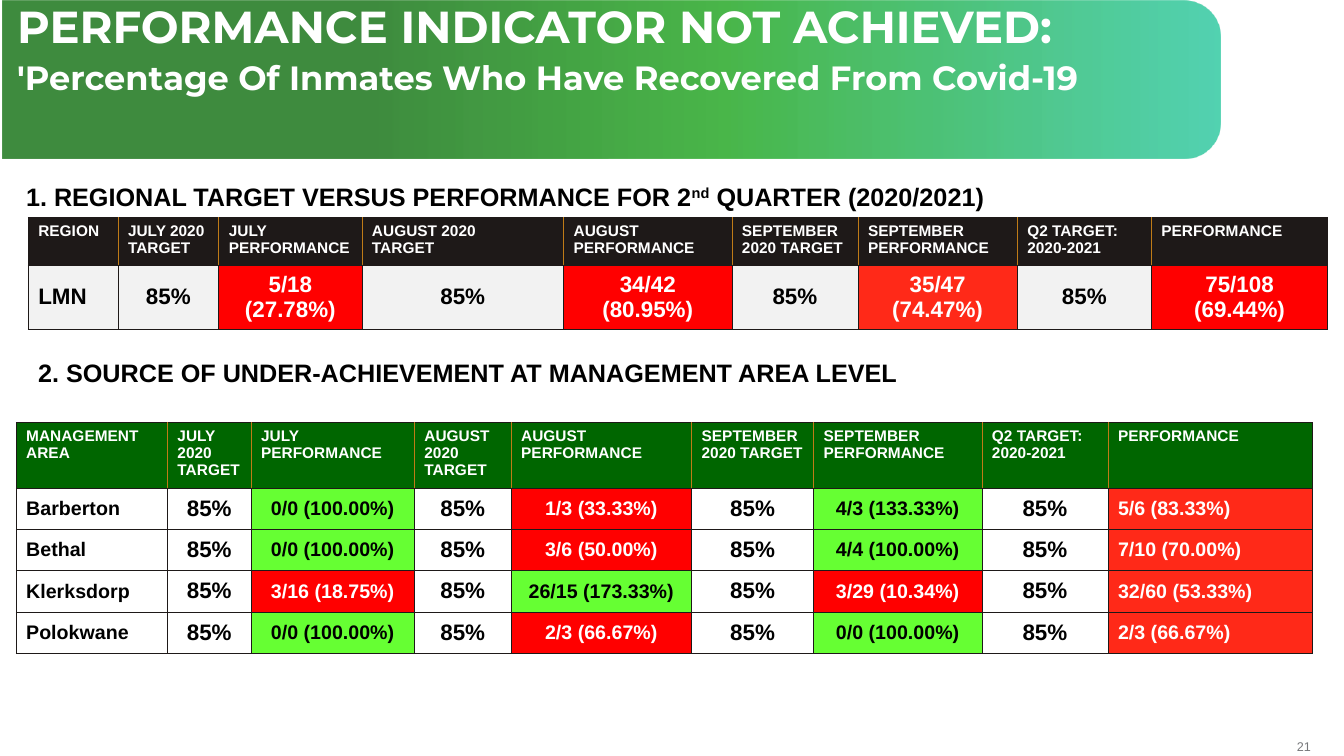
"""Builds the slide on the indicator for inmates recovered from Covid-19."""
from dataclasses import dataclass

from lxml.etree import SubElement
from pptx import Presentation
from pptx.dml.color import RGBColor
from pptx.enum.shapes import MSO_SHAPE
from pptx.enum.text import MSO_ANCHOR, MSO_AUTO_SIZE, PP_ALIGN
from pptx.oxml import parse_xml
from pptx.oxml.ns import nsdecls, qn
from pptx.util import Inches, Pt


@dataclass(frozen=True)
class Theme:
    font: str = "Arial"
    title_font: str = "Montserrat"
    white: str = "FFFFFF"
    black: str = "000000"
    ink: str = "1E1918"
    orange: str = "BF7B17"
    green: str = "006600"
    pale: str = "F2F2F2"
    achieved: str = "66FF33"
    missed: str = "FF0000"
    missed_soft: str = "FF2918"
    page: str = "77787B"
    banner: tuple = ((30, "006600", 75), (59, "009900", 71), (100, "00BC8D", 67))
    title: int = 32
    subtitle: int = 24
    heading: int = 18
    target: int = 16
    result: int = 14
    header: int = 11
    number: int = 9


T = Theme()


def set_font(p, size, color, name=T.font, bold=True):
    p.font.name, p.font.size, p.font.bold = name, Pt(size), bold
    p.font.color.rgb = RGBColor.from_string(color)


def set_cell(cell, text, fill, size, color, align, anchor, borders):
    cell.text = text
    cell.vertical_anchor = anchor
    for p in cell.text_frame.paragraphs:
        p.alignment = align
        set_font(p, size, color)
    tcPr = cell._tc.get_or_add_tcPr()
    for side, line in zip("LRTB", borders):
        ln = SubElement(tcPr, qn(f"a:ln{side}"), w=str(Pt(0.5)))
        SubElement(SubElement(ln, qn("a:solidFill")), qn("a:srgbClr"), val=line)
    cell.fill.solid()
    cell.fill.fore_color.rgb = RGBColor.from_string(fill)


prs = Presentation()
prs.slide_width, prs.slide_height = Inches(13.33), Inches(7.5)
s = prs.slides.add_slide(prs.slide_layouts[5])

banner = s.shapes.add_shape(MSO_SHAPE.ROUND_2_SAME_RECTANGLE, Inches(5.28),
                            Inches(-5.25), Inches(1.57), Inches(12.08))
banner.rotation = 90
banner.adjustments[0] = 0.233
banner.shadow.inherit = False
banner.line.fill.background()
stops = "".join(
    f'<a:gs pos="{pos * 1000}"><a:srgbClr val="{color}">'
    f'<a:alpha val="{alpha * 1000}"/></a:srgbClr></a:gs>'
    for pos, color, alpha in T.banner)
banner._element.spPr.find(qn("a:prstGeom")).addnext(parse_xml(
    f'<a:gradFill {nsdecls("a")} rotWithShape="1"><a:gsLst>{stops}</a:gsLst>'
    '<a:lin ang="16200000" scaled="0"/></a:gradFill>'))
s.shapes._spTree.insert(2, banner._element)

title = s.shapes.title
title.left, title.top = Inches(0.07), Inches(0)
title.width, title.height = Inches(11.98), Inches(0.57)
tf = title.text_frame
tf.text = ("PERFORMANCE INDICATOR NOT ACHIEVED:\n"
           "'Percentage Of Inmates Who Have Recovered From Covid-19")
tf.auto_size = MSO_AUTO_SIZE.NONE
tf.vertical_anchor = MSO_ANCHOR.TOP
for p, size in zip(tf.paragraphs, (T.title, T.subtitle)):
    p.alignment = PP_ALIGN.LEFT
    p.line_spacing = 0.9
    p.space_before, p.space_after = Pt(0), Pt(6)
    set_font(p, size, T.white, T.title_font)

headings = [
    (0.16, 1.75, ("1. REGIONAL TARGET VERSUS PERFORMANCE FOR 2", "nd",
                  " QUARTER (2020/2021)")),
    (0.28, 3.5, ("2. SOURCE OF UNDER-ACHIEVEMENT AT MANAGEMENT AREA LEVEL",)),
]
for left, top, parts in headings:
    tf = s.shapes.add_textbox(Inches(left), Inches(top), Inches(9.76), Inches(0.4)).text_frame
    tf.word_wrap = True
    p = tf.paragraphs[0]
    set_font(p, T.heading, T.black)
    for text in parts:
        r = p.add_run()
        r.text = text
        if text == "nd":
            r._r.get_or_add_rPr().set("baseline", "30000")

headers = ["JULY 2020\vTARGET", "JULY PERFORMANCE", "AUGUST 2020\vTARGET",
           "AUGUST PERFORMANCE", "SEPTEMBER 2020 TARGET", "SEPTEMBER PERFORMANCE",
           "Q2 TARGET: 2020-2021", "PERFORMANCE"]
fills = {"g": T.achieved, "r": T.missed, "s": T.missed_soft}
tables = [
    dict(at=(0.28, 2.16), first="REGION", head=T.ink, plain=T.pale, size=T.target,
         last=PP_ALIGN.CENTER, heights=(0.47, 0.63),
         widths=(0.89, 1, 1.42, 2, 1.67, 1.25, 1.58, 1.33, 1.75),
         rows=[("LMN", "rrsr", "5/18 (27.78%)", "34/42 (80.95%)", "35/47 (74.47%)",
                "75/108\n(69.44%)")]),
    dict(at=(0.16, 4.19), first="MANAGEMENT AREA", head=T.green, plain=T.white,
         size=T.result, last=PP_ALIGN.LEFT, heights=(0.65, 0.41),
         widths=(1.5, 0.83, 1.62, 0.96, 1.79, 1.21, 1.67, 1.25, 2.03),
         rows=[("Barberton", "grgs", "0/0 (100.00%)", "1/3 (33.33%)", "4/3 (133.33%)",
                "5/6 (83.33%)"),
               ("Bethal", "grgs", "0/0 (100.00%)", "3/6 (50.00%)", "4/4 (100.00%)",
                "7/10 (70.00%)"),
               ("Klerksdorp", "rgrs", "3/16 (18.75%)", "26/15 (173.33%)", "3/29 (10.34%)",
                "32/60 (53.33%)"),
               ("Polokwane", "grgs", "0/0 (100.00%)", "2/3 (66.67%)", "0/0 (100.00%)",
                "2/3 (66.67%)")]),
]
for t in tables:
    widths, (head_height, row_height) = t["widths"], t["heights"]
    n_rows, last = len(t["rows"]) + 1, len(widths) - 1
    left, top = t["at"]
    table = s.shapes.add_table(
        n_rows, len(widths), Inches(left), Inches(top), Inches(sum(widths)),
        Inches(head_height + row_height * (n_rows - 1))).table
    table.horz_banding = False
    for column, width in zip(table.columns, widths):
        column.width = Inches(width)
    for i, row in enumerate(table.rows):
        row.height = Inches(row_height if i else head_height)
    for j, text in enumerate([t["first"]] + headers):
        borders = (T.orange if j else T.ink, T.orange if j < last else T.ink, T.ink, T.ink)
        set_cell(table.cell(0, j), text, t["head"], T.header, T.white,
                 PP_ALIGN.LEFT, MSO_ANCHOR.TOP, borders)
    for i, (area, status, *results) in enumerate(t["rows"], 1):
        cells = [(area, t["plain"], t["size"], T.black, PP_ALIGN.LEFT)]
        for code, result in zip(status, results):
            cells.append(("85%", t["plain"], T.target, T.black, PP_ALIGN.CENTER))
            align = t["last"] if len(cells) == last else PP_ALIGN.CENTER
            color = T.black if code == "g" else T.white
            cells.append((result, fills[code], t["size"], color, align))
        for j, cell in enumerate(cells):
            set_cell(table.cell(i, j), *cell, MSO_ANCHOR.MIDDLE, (T.ink,) * 4)

tf = s.shapes.add_textbox(Inches(12.61), Inches(7.33), Inches(0.39), Inches(0.15)).text_frame
tf.margin_left = tf.margin_right = tf.margin_top = tf.margin_bottom = 0
tf.word_wrap = True
tf.vertical_anchor = MSO_ANCHOR.MIDDLE
p = tf.paragraphs[0]
p.text = "21"
p.alignment = PP_ALIGN.RIGHT
set_font(p, T.number, T.page, bold=False)

prs.save("out.pptx")
